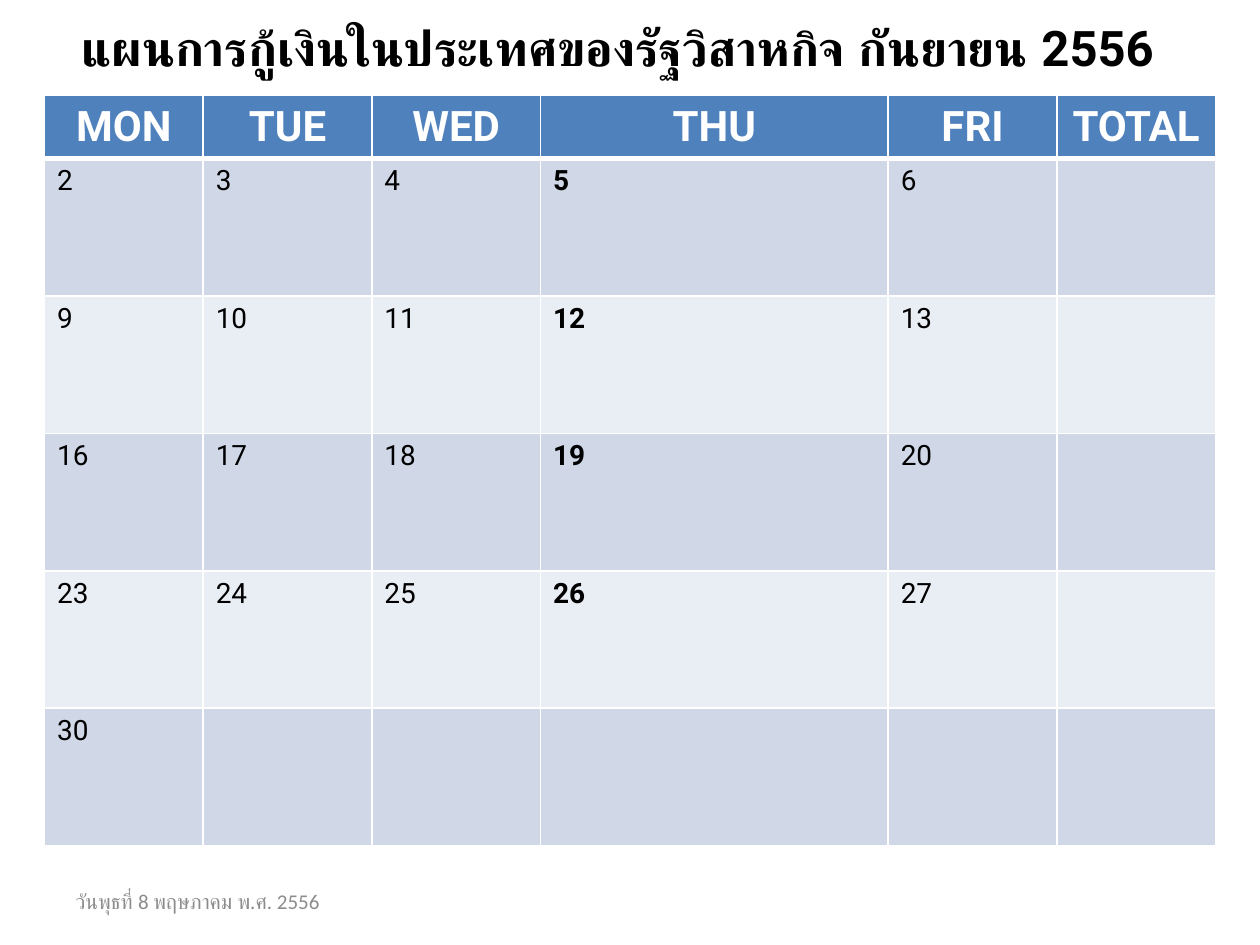
import dataclasses

import lxml.etree
import pptx
import pptx.dml.color
import pptx.enum.text
import pptx.oxml.ns
import pptx.util

Pt = pptx.util.Pt
RGB = pptx.dml.color.RGBColor
Align = pptx.enum.text.PP_ALIGN
Anchor = pptx.enum.text.MSO_ANCHOR


@dataclasses.dataclass(frozen=True)
class Theme:
    main_font: str = "Roboto"
    date_font: str = "Calibri"
    black: str = "000000"
    white: str = "FFFFFF"
    grey: str = "8C8C8C"
    header: str = "4F81BD"
    bands: tuple[str, str] = ("D0D8E8", "E9EDF4")
    title_size: float = 28
    header_size: float = 24
    day_size: float = 16
    date_size: float = 12


@dataclasses.dataclass(frozen=True)
class Style:
    font: str
    size: float
    color: str
    bold: bool = False
    align: Align = Align.LEFT


@dataclasses.dataclass(frozen=True)
class Label:
    text: str
    left: float
    top: float
    width: float
    height: float
    style: Style
    anchor: Anchor = Anchor.TOP
    right_inset: float = 7.2


THEME = Theme()
HEADER = Style(THEME.main_font, THEME.header_size, THEME.white, True, Align.CENTER)
DAY = Style(THEME.main_font, THEME.day_size, THEME.black)
THURSDAY = dataclasses.replace(DAY, bold=True)

LABELS = (
    Label("วันพุธที่ 8 พฤษภาคม พ.ศ. 2556", 36, 500.5, 168, 28.8,
          Style(THEME.date_font, THEME.date_size, THEME.grey), Anchor.MIDDLE),
    Label("แผนการกู้เงินในประเทศของรัฐวิสาหกิจ กันยายน 2556", 0, 6.5, 720, 41,
          Style(THEME.main_font, THEME.title_size, THEME.black, True, Align.CENTER),
          right_inset=21.2),
)
HEADINGS = ("MON", "TUE", "WED", "THU", "FRI", "TOTAL")
COLUMN_WIDTHS = (90.6, 96.4, 96.4, 198.7, 96.4, 90.6)
HEADER_HEIGHT, WEEK_HEIGHT = 34, 78.5
FIRST_MONDAY, LAST_DAY, WEEKS = 2, 30, 5


def write(paragraph, text: str, style: Style) -> None:
    paragraph.alignment = style.align
    run = paragraph.add_run()
    run.text = text
    run.font.name = style.font
    run.font.size = Pt(style.size)
    run.font.bold = style.bold
    run.font.color.rgb = RGB.from_string(style.color)


def add_label(slide, label: Label) -> None:
    box = slide.shapes.add_textbox(
        Pt(label.left), Pt(label.top), Pt(label.width), Pt(label.height))
    frame = box.text_frame
    frame.word_wrap = True
    frame.vertical_anchor = label.anchor
    frame.margin_right = Pt(label.right_inset)
    write(frame.paragraphs[0], label.text, label.style)


def draw_borders(cell, bottom: float, top: float) -> None:
    properties = cell._tc.get_or_add_tcPr()
    qn = pptx.oxml.ns.qn
    widths = {"a:lnL": 1, "a:lnR": 1, "a:lnT": top, "a:lnB": bottom}
    for index, (side, width) in enumerate(widths.items()):
        line = lxml.etree.Element(qn(side), w=str(int(Pt(width))))
        fill = lxml.etree.SubElement(line, qn("a:solidFill"))
        lxml.etree.SubElement(fill, qn("a:srgbClr"), val=THEME.white)
        properties.insert(index, line)


def fill_cell(cell, text: str, style: Style, color: str,
              bottom: float = 1, top: float = 1) -> None:
    cell.fill.solid()
    cell.fill.fore_color.rgb = RGB.from_string(color)
    draw_borders(cell, bottom, top)
    if text:
        write(cell.text_frame.paragraphs[0], text, style)


def add_calendar(slide) -> None:
    height = HEADER_HEIGHT + WEEKS * WEEK_HEIGHT
    calendar = slide.shapes.add_table(
        WEEKS + 1, len(HEADINGS), Pt(25.5), Pt(54.7),
        Pt(sum(COLUMN_WIDTHS)), Pt(height)).table
    for column, width in zip(calendar.columns, COLUMN_WIDTHS):
        column.width = Pt(width)
    for week, row in enumerate(calendar.rows):
        row.height = Pt(WEEK_HEIGHT if week else HEADER_HEIGHT)

    for weekday, heading in enumerate(HEADINGS):
        fill_cell(calendar.cell(0, weekday), heading, HEADER, THEME.header, bottom=3)
        for week in range(WEEKS):
            day = FIRST_MONDAY + 7 * week + weekday
            shown = heading != "TOTAL" and day <= LAST_DAY
            fill_cell(calendar.cell(week + 1, weekday), str(day) if shown else "",
                      THURSDAY if heading == "THU" else DAY,
                      THEME.bands[week % 2], top=1 if week else 3)


def main() -> None:
    deck = pptx.Presentation()
    deck.slide_width, deck.slide_height = Pt(720), Pt(540)
    slide = deck.slides.add_slide(deck.slide_layouts[6])
    for label in LABELS:
        add_label(slide, label)
    add_calendar(slide)
    deck.save("out.pptx")


if __name__ == "__main__":
    main()
